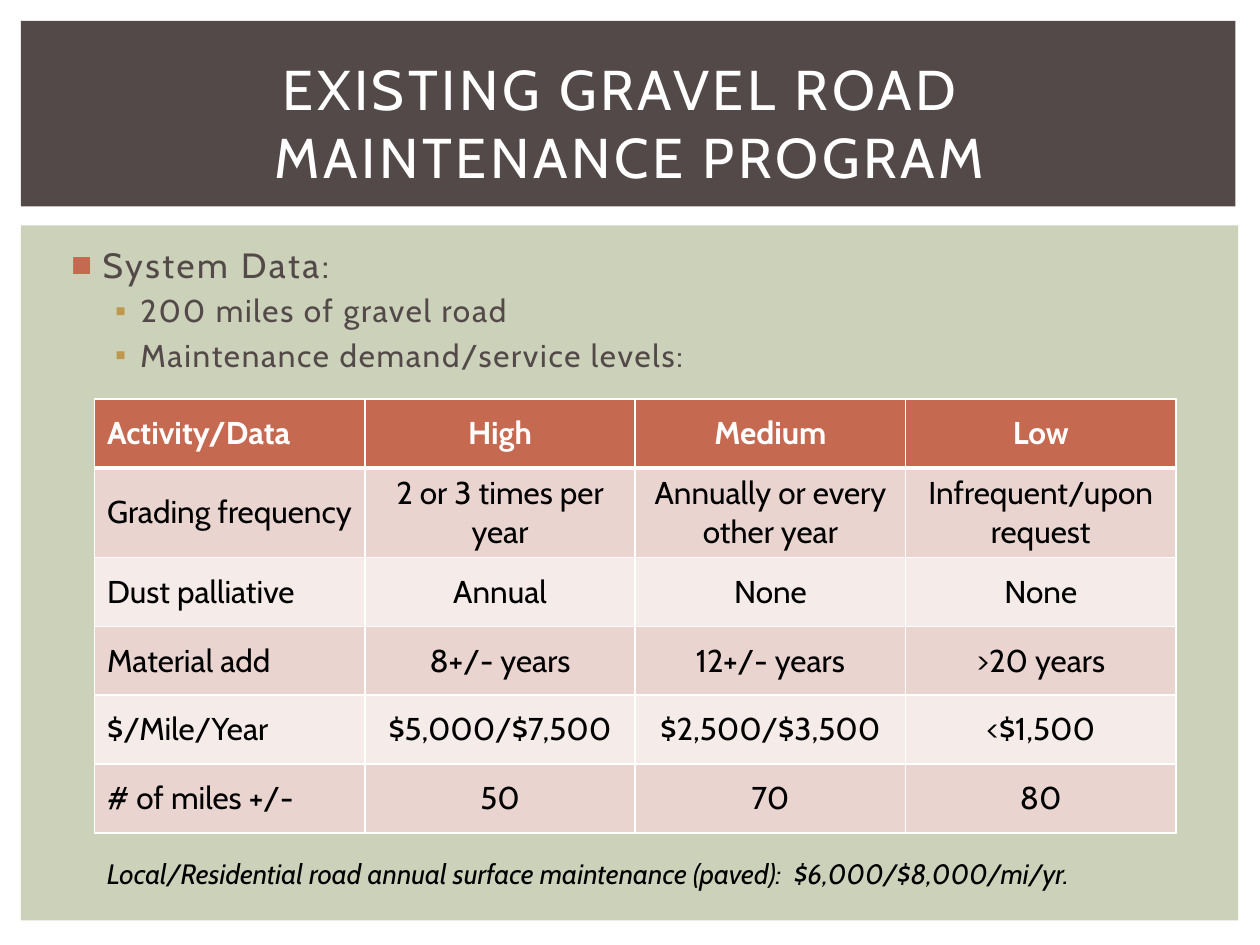
from dataclasses import dataclass

from lxml import etree
from pptx import Presentation
from pptx import util as u
from pptx.dml.color import RGBColor
from pptx.enum import shapes, text
from pptx.oxml.ns import qn


@dataclass(frozen=True)
class Theme:
    font: str = "Cabin"
    bullet_font: str = "Arial"
    white: str = "FFFFFF"
    black: str = "000000"
    brown: str = "534949"
    sage: str = "CCD1B9"
    rust: str = "C66951"
    gold: str = "BF974D"
    bands: tuple[str, str] = ("EAD4D0", "F5EBE9")
    title_size: float = 32
    lead_size: float = 20
    body_size: float = 18
    note_size: float = 16


@dataclass(frozen=True)
class Area:
    left: float
    top: float
    width: float
    height: float

    def lengths(self) -> tuple:
        return u.Pt(self.left), u.Pt(self.top), u.Pt(self.width), u.Pt(self.height)


@dataclass(frozen=True)
class Style:
    size: float
    color: str
    bold: bool = False
    italic: bool = False
    spacing: float = 0


@dataclass(frozen=True)
class Level:
    style: Style
    mark: str
    mark_color: str
    margin: float
    hanging: float


@dataclass(frozen=True)
class Bullet:
    words: str
    level: Level


THEME = Theme()
TITLE_STYLE = Style(THEME.title_size, THEME.white, spacing=2)
HEADER_STYLE = Style(THEME.body_size, THEME.white, bold=True)
CELL_STYLE = Style(THEME.body_size, THEME.black)
NOTE_STYLE = Style(THEME.note_size, THEME.black, italic=True)
LEAD = Level(Style(THEME.lead_size, THEME.brown, spacing=1.5), "■", THEME.rust, 21.6, 18)
DETAIL = Level(Style(THEME.body_size, THEME.brown, spacing=1), "▪", THEME.gold, 43.2, 14.4)

TITLE_LINES = ("EXISTING GRAVEL ROAD ", "MAINTENANCE PROGRAM")
BULLETS = (
    Bullet("System Data:", LEAD),
    Bullet("200 miles of gravel road", DETAIL),
    Bullet("Maintenance demand/service levels:", DETAIL),
)
SERVICE_LEVELS = (
    ("Activity/Data", "High", "Medium", "Low"),
    ("Grading frequency", "2 or 3 times per year", "Annually or every other year",
     "Infrequent/upon request"),
    ("Dust palliative", "Annual", "None", "None"),
    ("Material add", "8+/- years", "12+/- years", ">20 years"),
    ("$/Mile/Year", "$5,000/$7,500", "$2,500/$3,500", "<$1,500"),
    ("# of miles +/-", "50", "70", "80"),
)
ROW_HEIGHTS = (39.4, 50.9, 39.4, 39.4, 39.4, 39.4)
NOTE = "Local/Residential road annual surface maintenance (paved):  $6,000/$8,000/mi/yr."


def add_span(para, words: str, style: Style) -> None:
    span = para.add_run()
    span.text = words
    font = span.font
    font.name, font.size = THEME.font, u.Pt(style.size)
    font.bold, font.italic = style.bold, style.italic
    font.color.rgb = RGBColor.from_string(style.color)
    if style.spacing:
        font._element.set("spc", str(round(style.spacing * 100)))


def add_panel(page, area: Area, color: str) -> None:
    panel = page.shapes.add_shape(shapes.MSO_SHAPE.RECTANGLE, *area.lengths())
    panel.shadow.inherit = False
    panel.fill.solid()
    panel.fill.fore_color.rgb = RGBColor.from_string(color)
    panel.line.fill.background()


def place_title(page, area: Area) -> None:
    title = page.shapes.title
    title.left, title.top, title.width, title.height = area.lengths()
    title.element.getparent().append(title.element)  # bring in front of the panels
    frame = title.text_frame
    frame.auto_size = text.MSO_AUTO_SIZE.NONE
    frame.vertical_anchor = text.MSO_ANCHOR.MIDDLE
    para = frame.paragraphs[0]
    para.alignment = text.PP_ALIGN.CENTER
    first, second = TITLE_LINES
    add_span(para, first, TITLE_STYLE)
    para.add_line_break()
    add_span(para, second, TITLE_STYLE)


def add_text_box(page, area: Area):
    frame = page.shapes.add_textbox(*area.lengths()).text_frame
    frame.word_wrap = True
    return frame


def set_bullet(para, level: Level) -> None:
    props = para._p.get_or_add_pPr()
    props.set("marL", str(u.Pt(level.margin)))
    props.set("indent", str(-u.Pt(level.hanging)))
    color = etree.SubElement(props, qn("a:buClr"))
    etree.SubElement(color, qn("a:srgbClr"), val=level.mark_color)
    etree.SubElement(props, qn("a:buFont"), typeface=THEME.bullet_font)
    etree.SubElement(props, qn("a:buChar"), char=level.mark)


def add_bullets(page, area: Area) -> None:
    frame = add_text_box(page, area)
    for index, bullet in enumerate(BULLETS):
        para = frame.add_paragraph() if index else frame.paragraphs[0]
        para.level = 0 if bullet.level is LEAD else 1
        set_bullet(para, bullet.level)
        if index:
            para.space_before = u.Pt(3.6)
        add_span(para, bullet.words, bullet.level.style)


def set_borders(cell, top: float, bottom: float) -> None:
    """Draw white borders; call before filling, as the schema puts lines first."""
    props = cell._tc.get_or_add_tcPr()
    for side, width in (("L", 1), ("R", 1), ("T", top), ("B", bottom)):
        line = etree.SubElement(props, qn(f"a:ln{side}"), w=str(u.Pt(width)))
        fill = etree.SubElement(line, qn("a:solidFill"))
        etree.SubElement(fill, qn("a:srgbClr"), val=THEME.white)


def fill_cell(cell, words: str, row: int, column: int) -> None:
    set_borders(cell, top=3 if row == 1 else 1, bottom=3 if row == 0 else 1)
    cell.fill.solid()
    color = THEME.bands[(row - 1) % 2] if row else THEME.rust
    cell.fill.fore_color.rgb = RGBColor.from_string(color)
    cell.vertical_anchor = text.MSO_ANCHOR.MIDDLE
    para = cell.text_frame.paragraphs[0]
    para.alignment = text.PP_ALIGN.CENTER if column else text.PP_ALIGN.LEFT
    add_span(para, words, CELL_STYLE if row else HEADER_STYLE)


def add_service_table(page, left: float, top: float, width: float) -> None:
    area = Area(left, top, width, sum(ROW_HEIGHTS))
    columns = len(SERVICE_LEVELS[0])
    table = page.shapes.add_table(len(SERVICE_LEVELS), columns, *area.lengths()).table
    for column in table.columns:
        column.width = u.Pt(width / columns)
    for row, (height, entries) in enumerate(zip(ROW_HEIGHTS, SERVICE_LEVELS)):
        table.rows[row].height = u.Pt(height)
        for column, words in enumerate(entries):
            fill_cell(table.cell(row, column), words, row, column)


def main() -> None:
    deck = Presentation()
    deck.slide_width, deck.slide_height = u.Pt(720), u.Pt(540)
    page = deck.slides.add_slide(deck.slide_layouts.get_by_name("Title Only"))
    add_panel(page, Area(12, 128.8, 695.5, 397.2), THEME.sage)
    add_panel(page, Area(12, 12, 694, 106), THEME.brown)
    add_bullets(page, Area(30, 135.4, 662, 347))
    place_title(page, Area(30, 28.4, 660, 82.8))
    add_service_table(page, left=54, top=228, width=618)
    note = add_text_box(page, Area(54, 486, 612, 26.6))
    add_span(note.paragraphs[0], NOTE, NOTE_STYLE)
    deck.save("out.pptx")


if __name__ == "__main__":
    main()
